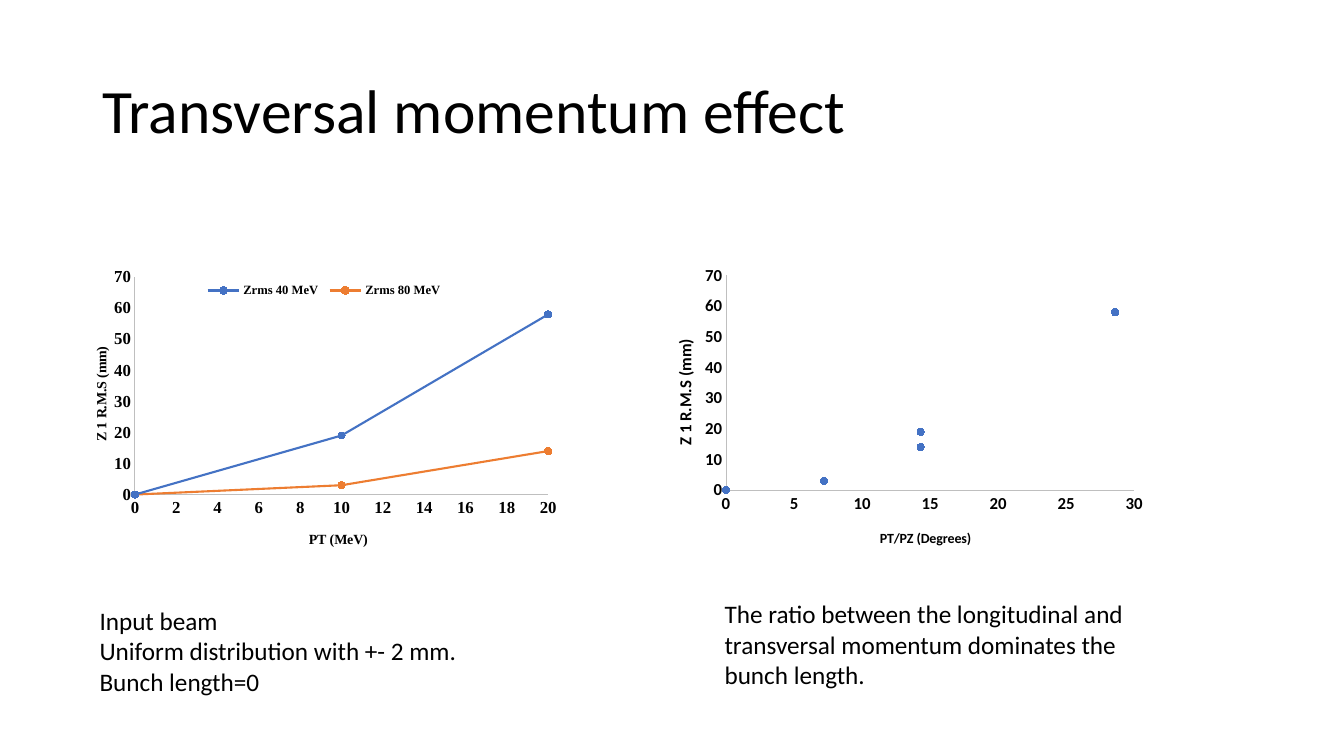
from lxml import etree
from pptx import Presentation
from pptx.chart.data import XyChartData
from pptx.dml.color import RGBColor
from pptx.enum.chart import XL_CHART_TYPE, XL_LEGEND_POSITION, XL_MARKER_STYLE, XL_TICK_MARK
from pptx.enum.text import MSO_ANCHOR, PP_ALIGN
from pptx.oxml.ns import qn
from pptx.util import Pt

SMOOTH, POINTS = XL_CHART_TYPE.XY_SCATTER_SMOOTH, XL_CHART_TYPE.XY_SCATTER
BOTTOM, CIRCLE, NO_TICK = XL_LEGEND_POSITION.BOTTOM, XL_MARKER_STYLE.CIRCLE, XL_TICK_MARK.NONE
MIDDLE, LEFT = MSO_ANCHOR.MIDDLE, PP_ALIGN.LEFT
COLORS = {"text": "000000", "axis": "BFBFBF", "blue": "4472C4", "orange": "ED7D31"}
SERIES_COLORS = ("blue", "orange")


class Deck:
    def __init__(self, width, height):
        self.prs = Presentation()
        self.prs.slide_width, self.prs.slide_height = Pt(width), Pt(height)
        self.s = self.prs.slides.add_slide(self.prs.slide_layouts[5])

    def color(self, name):
        return RGBColor.from_string(COLORS[name])

    def apply(self, obj, **values):
        for name, value in values.items():
            setattr(obj, name, value)

    def font(self, font, size, name="Calibri", bold=False):
        self.apply(font, size=Pt(size), name=name, bold=bold)
        font.color.rgb = self.color("text")

    def place(self, element, index, **fractions):
        for old in element.findall(qn("c:layout")):
            element.remove(old)
        layout = etree.Element(qn("c:layout"))
        manual = etree.SubElement(layout, qn("c:manualLayout"))
        values = {"xMode": "edge", "yMode": "edge", **fractions}
        if element.tag == qn("c:plotArea"):
            values = {"layoutTarget": "inner", **values}
        for name, value in values.items():
            etree.SubElement(manual, qn(f"c:{name}")).set("val", str(value))
        element.insert(index, layout)

    def title(self, text, box):
        sp = self.s.shapes.title
        self.apply(sp, **dict(zip(("left", "top", "width", "height"), map(Pt, box))))
        tf = sp.text_frame
        self.apply(tf, text=text, vertical_anchor=MIDDLE, word_wrap=True)
        p = tf.paragraphs[0]
        self.apply(p, alignment=LEFT, line_spacing=0.9)
        self.font(p.runs[0].font, 44)

    def text(self, lines, box):
        tf = self.s.shapes.add_textbox(*map(Pt, box)).text_frame
        self.apply(tf, text="\n".join(lines), word_wrap=True)
        for p in tf.paragraphs:
            self.font(p.runs[0].font, 18)

    def axis(self, axis, title, size, spot, limit, step, font):
        self.apply(axis, minimum_scale=0, maximum_scale=limit, major_unit=step,
                   has_major_gridlines=False, major_tick_mark=NO_TICK,
                   minor_tick_mark=NO_TICK)
        self.font(axis.tick_labels.font, 12, font, True)
        axis.format.line.width = Pt(0.75)
        axis.format.line.color.rgb = self.color("axis")
        tf = axis.axis_title.text_frame
        tf.text = title
        self.font(tf.paragraphs[0].runs[0].font, size, font, True)
        self.place(axis.axis_title._element, 1, x=spot[0], y=spot[1])

    def chart(self, kind, box, series, x_axis, y_axis, plot_area, font, legend=None):
        data = XyChartData()
        for name, points in series.items():
            entry = data.add_series(name)
            for x, y in points:
                entry.add_data_point(x, y)
        chart = self.s.shapes.add_chart(kind, *map(Pt, box), data).chart
        self.apply(chart, has_title=False, has_legend=bool(legend))
        self.font(chart.font, 10, font, True)
        self.axis(chart.category_axis, *x_axis, font)
        self.axis(chart.value_axis, *y_axis, font)
        plot = chart.plots[0]
        plot.vary_by_categories = False
        for ser, name in zip(plot.series, SERIES_COLORS):
            rgb = self.color(name)
            self.apply(ser.marker, style=CIRCLE, size=5)
            ser.marker.format.fill.solid()
            ser.marker.format.fill.fore_color.rgb = rgb
            ser.marker.format.line.color.rgb = rgb
            if kind == SMOOTH:
                ser.format.line.width = Pt(1.5)
                ser.format.line.color.rgb = rgb
            else:
                ser.format.line.fill.background()
        self.place(chart._chartSpace.chart.plotArea, 0, **plot_area)
        if legend:
            self.apply(chart.legend, position=BOTTOM, include_in_layout=False)
            self.font(chart.legend.font, 9, font, True)
            self.place(chart.legend._element, 1, **legend)


def main():
    deck = Deck(960, 540)
    deck.title("Transversal momentum effect", (66, 28.75, 828, 104.4))
    deck.chart(
        SMOOTH, (46, 186, 360, 239),
        {"Zrms 40 MeV": [(20, 58), (10, 19), (0, 0)],
         "Zrms 80 MeV": [(20, 14), (10, 3), (0, 0)]},
        ("PT (MeV)", 10, (0.48, 0.8), 20, 2),
        ("Z 1 R.M.S (mm)", 10, (0.05, 0.25), 70, 10),
        {"x": 0.14, "y": 0.05, "w": 0.82, "h": 0.65}, "Times New Roman",
        {"x": 0.27, "y": 0.06, "w": 0.49, "h": 0.06})
    deck.chart(
        POINTS, (461, 186, 360, 216),
        {"Series 1": [(0, 0), (0, 0), (7.2, 3), (14.3, 14), (14.3, 19), (28.6, 58)]},
        ("PT/PZ (Degrees)", 10, (0.46, 0.88), 30, 5),
        ("Z 1 R.M.S (mm)", 12, (0.05, 0.25), 70, 10),
        {"x": 0.16, "y": 0.05, "w": 0.81, "h": 0.71}, "Calibri")
    deck.text(["The ratio between the longitudinal and transversal momentum "
               "dominates the bunch length."], (510.5, 424, 319.7, 72.7))
    deck.text(["Input beam", "Uniform distribution with +- 2 mm.", "Bunch length=0"],
              (64, 429, 324.7, 110))
    deck.prs.save("out.pptx")


if __name__ == "__main__":
    main()
